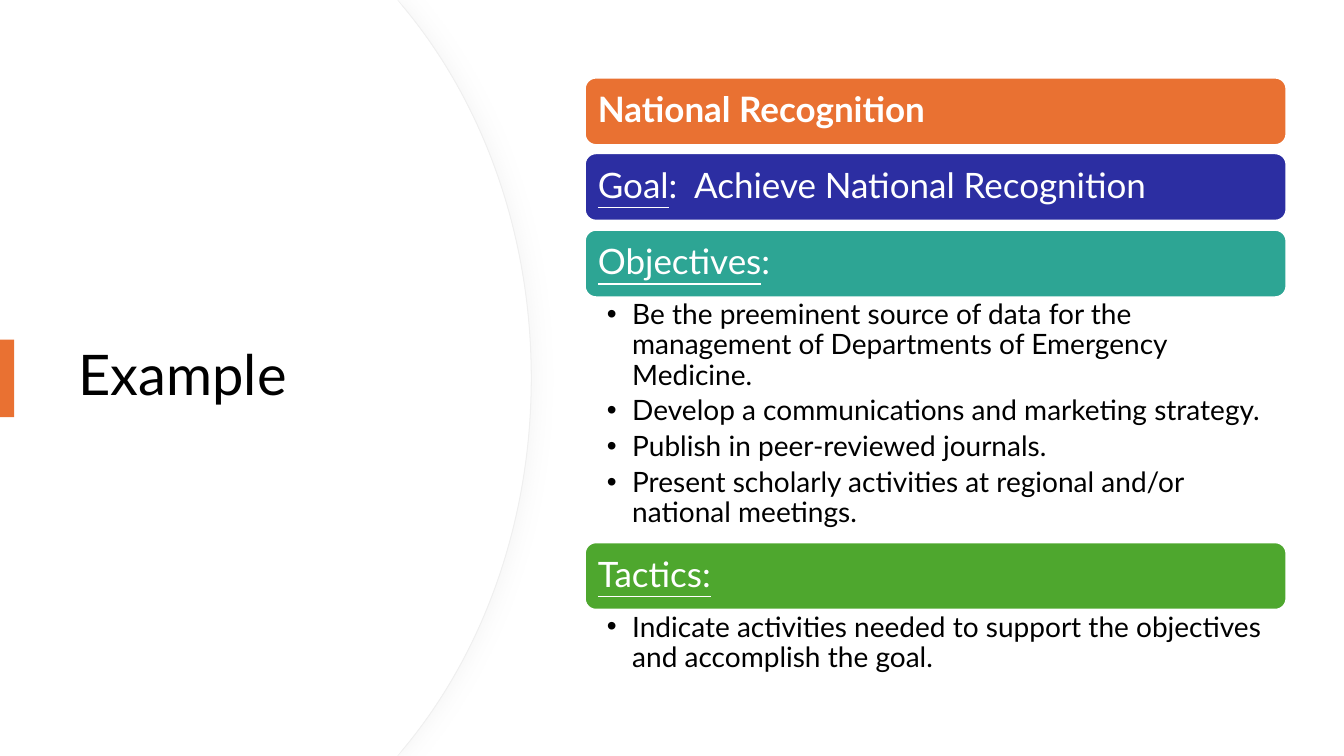
from lxml import etree
from pptx import Presentation
from pptx.dml.color import RGBColor
from pptx.enum.shapes import MSO_SHAPE
from pptx.enum.text import MSO_ANCHOR, MSO_AUTO_SIZE, PP_ALIGN
from pptx.oxml.ns import qn
from pptx.util import Pt

PX = 9144  # one hundredth of an inch, in EMU
RECT, ROUNDED = MSO_SHAPE.RECTANGLE, MSO_SHAPE.ROUNDED_RECTANGLE
TOP, MIDDLE = MSO_ANCHOR.TOP, MSO_ANCHOR.MIDDLE
LEFT, NO_FIT = PP_ALIGN.LEFT, MSO_AUTO_SIZE.NONE
TWO_CONTENT = 3
FONT, WHITE, BLACK, ORANGE = "Lato", "FFFFFF", "000000", "E97132"
BAR_HEIGHT = 67

# Each section: bar colour, heading spans (text, format),
# height of the gap or list below the bar, list items
SECTIONS = [
    (ORANGE, [("National Recognition", {"bold": True})], 8, []),
    ("2C2EA2", [("Goal", {"underline": True}),
                (":  Achieve National Recognition", {})], 9, []),
    ("2DA594", [("Objectives", {"underline": True}), (":", {})], 243, [
        "Be the preeminent source of data for the management of "
        "Departments of Emergency Medicine.",
        "Develop a communications and marketing strategy.",
        "Publish in peer-reviewed journals.",
        "Present scholarly activities at regional and/or national meetings."]),
    ("4EA72E", [("Tactics:", {"underline": True})], 69, [
        "Indicate activities needed to support the objectives "
        "and accomplish the goal."]),
]


def colour(value):
    return RGBColor.from_string(value)


def set_all(target, values):
    for name, value in values.items():
        setattr(target, name, value)


def place(shape, box):
    names = ("left", "top", "width", "height")
    set_all(shape, {name: length * PX for name, length in zip(names, box)})


def paint(shape, fill, line=None, width=0):
    shape.shadow.inherit = False
    shape.fill.solid()
    shape.fill.fore_color.rgb = colour(fill)
    if line:
        shape.line.color.rgb = colour(line)
        shape.line.width = Pt(width)
    else:
        shape.line.fill.background()


def format_frame(frame, anchor, margins):
    names = ("margin_left", "margin_top", "margin_right", "margin_bottom")
    set_all(frame, {name: length * PX for name, length in zip(names, margins)})
    set_all(frame, {"word_wrap": True, "auto_size": NO_FIT,
                    "vertical_anchor": anchor})


def write_para(para, spans, size, text_colour, space_after=0):
    set_all(para, {"alignment": LEFT, "line_spacing": 0.9,
                   "space_before": Pt(0), "space_after": Pt(space_after)})
    for text, extra in spans:
        span = para.add_run()
        span.text = text
        set_all(span.font, {"name": FONT, "size": Pt(size), **extra})
        span.font.color.rgb = colour(text_colour)


def bend(shape, first, count):
    """Turn each three line segments from the given one into a curve."""
    segments = list(shape.element.iter(qn("a:lnTo")))
    for start in range(first, first + 3 * count, 3):
        curve = etree.Element(qn("a:cubicBezTo"))
        segments[start].addprevious(curve)
        for segment in segments[start:start + 3]:
            curve.append(segment[0])
            segment.getparent().remove(segment)


def add_panel(page, box, line=None):
    """White panel whose right side bulges outwards."""
    left, top, width, height = box
    right, bottom, middle = left + width, top + height, top + height // 2
    upper = [(left + 394, top), (right - 126, top + 8),
             (right - 48, top + 102), (right, top + 232)]
    lower = [(x, top + bottom - y) for x, y in reversed(upper)]
    outline = [*upper, (right, middle), *lower, (left, bottom)]
    builder = page.shapes.build_freeform(left, top, scale=PX)
    builder.add_line_segments(outline)
    panel = builder.convert_to_shape()
    bend(panel, first=2, count=2)
    paint(panel, WHITE, line, 0.75)
    return panel


def add_shadow(shape, shade, opacity, blur, distance):
    effects = shape.element.spPr.find(qn("a:effectLst"))
    shadow = etree.SubElement(effects, qn("a:outerShdw"), {
        "blurRad": str(Pt(blur)), "dist": str(Pt(distance)), "dir": "0"})
    tone = etree.SubElement(shadow, qn("a:srgbClr"), val=shade)
    etree.SubElement(tone, qn("a:alpha"), val=str(opacity * 1000))


def add_title_side(page, box):
    left, top, width, height = box
    backing = add_panel(page, box, "EFEFEF")
    add_shadow(backing, "D9D9D9", 22, 14, 3)
    add_panel(page, (left, top, width - 1, height))

    # Title, brought in front of the panels
    title = page.shapes.title
    place(title, (left + 68, top + 127, 394, 495))
    format_frame(title.text_frame, MIDDLE, (10, 5, 10, 5))
    write_para(title.text_frame.paragraphs[0], [("Example", {})], 40, BLACK)
    title.element.getparent().append(title.element)

    # Accent at the slide edge
    accent = page.shapes.add_shape(RECT, 0, 0, 0, 0)
    place(accent, (left, top + 337, 14, 77))
    paint(accent, ORANGE)


def add_bar(page, box, fill, spans):
    bar = page.shapes.add_shape(ROUNDED, 0, 0, 0, 0)
    place(bar, box)
    paint(bar, fill, WHITE, 1.5)
    format_frame(bar.text_frame, MIDDLE, (10, 10, 10, 10))
    write_para(bar.text_frame.paragraphs[0], spans, 25, WHITE)


def fill_list(body, box, items):
    place(body, box)
    frame = body.text_frame
    format_frame(frame, TOP, (22, 3, 19, 3))
    for index, item in enumerate(items):
        para = frame.add_paragraph() if index else frame.paragraphs[0]
        write_para(para, [(item, {})], 20, BLACK, space_after=4)
        properties = para._p.get_or_add_pPr()
        properties.set("marL", str(25 * PX))
        properties.set("indent", str(-25 * PX))
        etree.SubElement(properties, qn("a:buChar"), char="•")


def add_sections(page, box):
    """Stack of heading bars, some followed by a list."""
    left, top, width, _ = box
    bodies = iter([holder for holder in page.placeholders
                   if holder.placeholder_format.idx in (1, 2)])
    for fill, spans, below, items in SECTIONS:
        add_bar(page, (left, top, width, BAR_HEIGHT), fill, spans)
        top += BAR_HEIGHT
        if items:
            fill_list(next(bodies), (left, top, width, below), items)
        top += below


def main():
    deck = Presentation()
    set_all(deck, {"slide_width": 1333 * PX, "slide_height": 750 * PX})
    page = deck.slides.add_slide(deck.slide_layouts[TWO_CONTENT])
    add_title_side(page, (0, 0, 527, 750))
    add_sections(page, (580, 77, 696, 597))
    deck.save("out.pptx")


if __name__ == "__main__":
    main()
